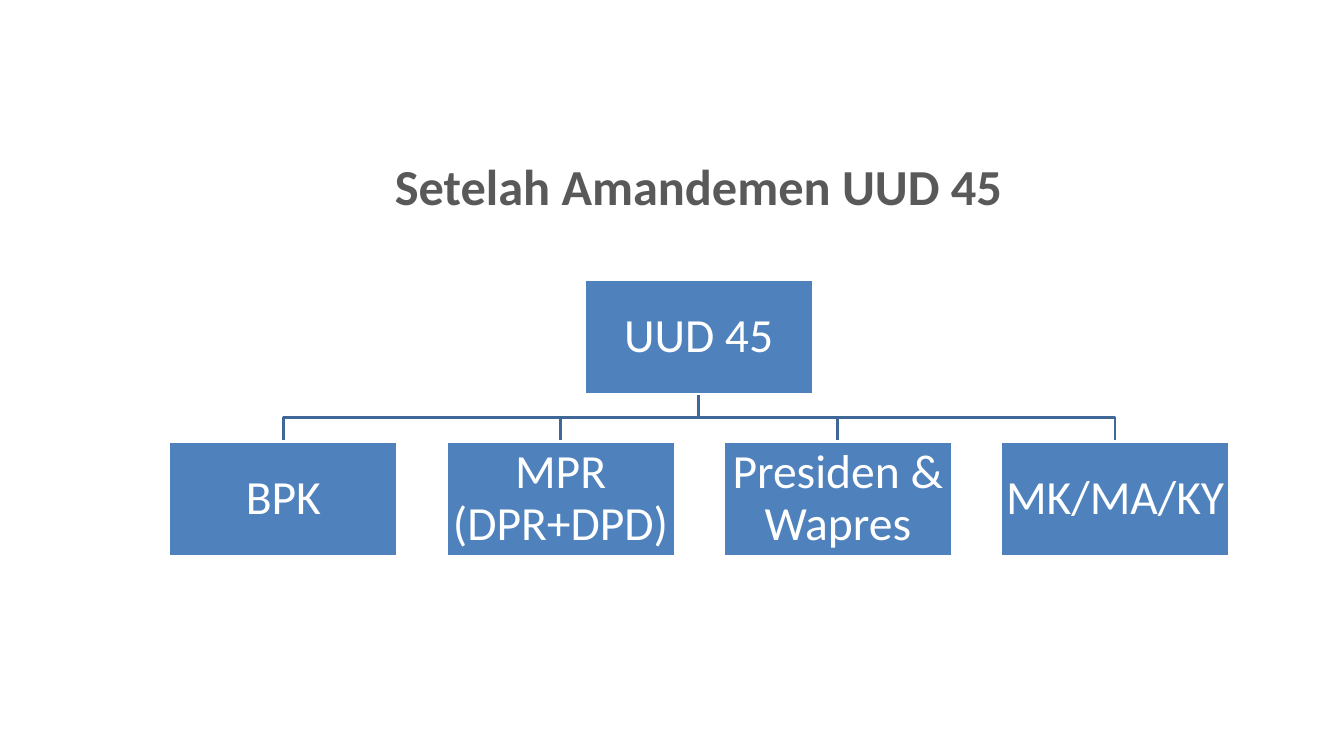
from pptx import Presentation
from pptx.dml.color import RGBColor
from pptx.enum.shapes import MSO_SHAPE
from pptx.enum.text import MSO_ANCHOR, PP_ALIGN
from pptx.util import Emu, Pt

PX = 9144  # 100 px to the inch
COLORS = {"title": "595959", "box": "4F81BD", "white": "FFFFFF", "link": "3F6797"}
FONT = "Calibri"


def px(n):
    return Emu(n * PX)


def rgb(name):
    return RGBColor.from_string(COLORS[name])


def write(tf, text, size, color, bold=False, anchor=MSO_ANCHOR.MIDDLE,
          inset=2, line_spacing=None):
    tf.word_wrap = True
    tf.vertical_anchor = anchor
    tf.margin_left = tf.margin_right = tf.margin_top = tf.margin_bottom = px(inset)
    p = tf.paragraphs[0]
    p.alignment = PP_ALIGN.CENTER
    if line_spacing:
        p.line_spacing = line_spacing
    r = p.add_run()
    r.text = text
    r.font.name = FONT
    r.font.size = Pt(size)
    r.font.bold = bold
    r.font.color.rgb = rgb(color)


class OrgChart:
    BOX_W, BOX_H = 227, 114
    LINE = Pt(2)

    def __init__(self, slide):
        self.s = slide

    def title(self, text, x, y, w, h):
        sp = self.s.shapes.add_textbox(px(x), px(y), px(w), px(h))
        write(sp.text_frame, text, 36, "title", bold=True,
              anchor=MSO_ANCHOR.TOP, inset=7)

    def box(self, text, center, top):
        sp = self.s.shapes.add_shape(
            MSO_SHAPE.RECTANGLE, px(center) - px(self.BOX_W) // 2, px(top),
            px(self.BOX_W), px(self.BOX_H))
        sp.shadow.inherit = False
        sp.fill.solid()
        sp.fill.fore_color.rgb = rgb("box")
        sp.line.color.rgb = rgb("white")
        sp.line.width = self.LINE
        write(sp.text_frame, text, 34, "white", line_spacing=0.9)

    def elbow(self, x1, y1, x2, y2):
        """Draw a line down, across and down again."""
        mid = (y1 + y2) // 2
        fb = self.s.shapes.build_freeform(x1, y1, scale=PX)
        fb.add_line_segments([(x1, mid), (x2, mid), (x2, y2)], close=False)
        sp = fb.convert_to_shape()
        sp.shadow.inherit = False
        sp.fill.background()
        sp.line.color.rgb = rgb("link")
        sp.line.width = self.LINE


def main():
    prs = Presentation()
    prs.slide_width, prs.slide_height = px(1333), px(750)
    chart = OrgChart(prs.slides.add_slide(prs.slide_layouts[6]))

    chart.title("Setelah Amandemen UUD 45", 142, 147, 1102, 47)

    root_x, root_y, branch_y, step = 693, 277, 438, 275
    branches = ["BPK", "MPR (DPR+DPD)", "Presiden & Wapres", "MK/MA/KY"]
    first_x = root_x - step * (len(branches) - 1) // 2
    centers = [first_x + i * step for i in range(len(branches))]

    for x in reversed(centers):
        chart.elbow(root_x, root_y + chart.BOX_H, x, branch_y)
    chart.box("UUD 45", root_x, root_y)
    for text, x in zip(branches, centers):
        chart.box(text, x, branch_y)

    prs.save("out.pptx")


if __name__ == "__main__":
    main()
